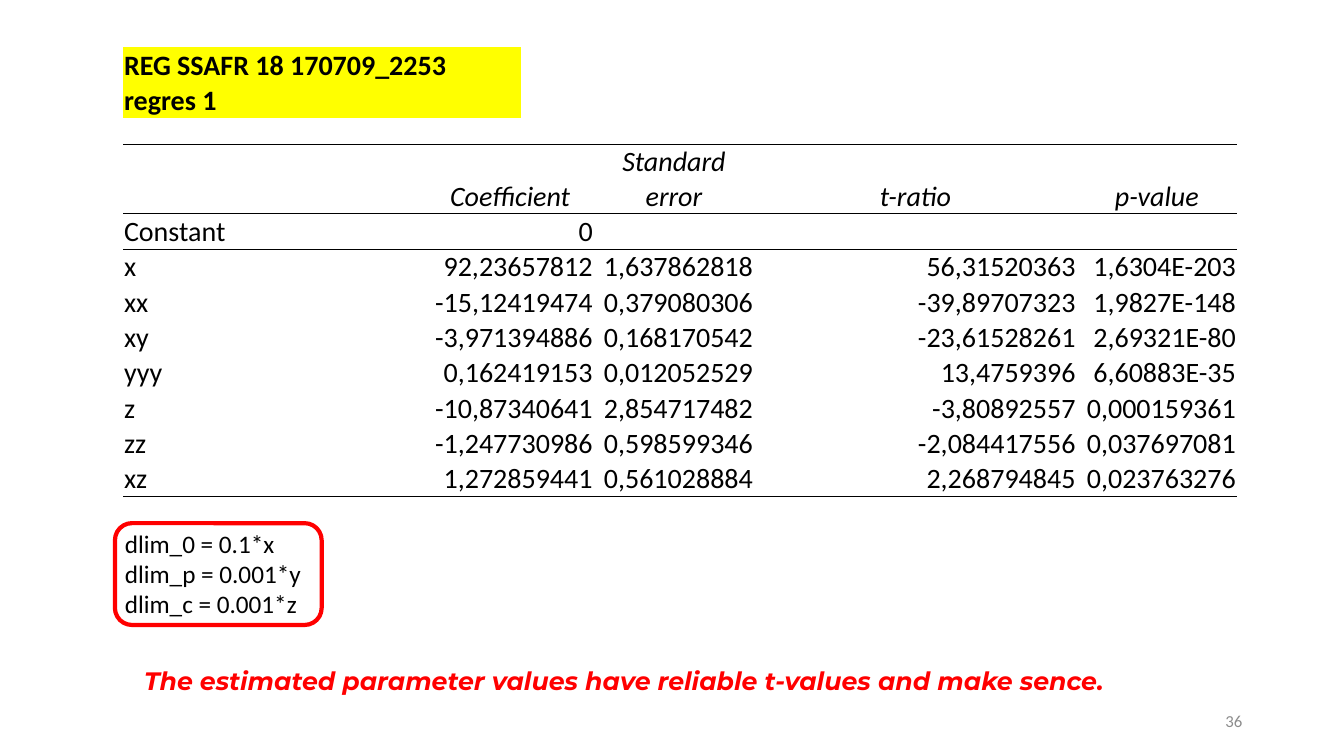
from lxml.etree import SubElement
from pptx import Presentation
from pptx.dml.color import RGBColor
from pptx.enum.shapes import MSO_SHAPE as Shape
from pptx.enum.text import MSO_ANCHOR as Anchor, PP_ALIGN as Align
from pptx.oxml.ns import qn
from pptx.util import Pt

PX = 9144  # 100 px to the inch
ROW = 34
NO_GRID_STYLE = "{2D5ABB26-0587-4C30-8999-92F81FD0307C}"


def format_text(frame, size, color="000000", font="Calibri", align=Align.LEFT, bold=False, italic=False):
    for para in frame.paragraphs:
        para.alignment = align
        for span in para.runs:
            span.font.name = font
            span.font.size = Pt(size)
            span.font.bold = bold
            span.font.italic = italic
            span.font.color.rgb = RGBColor.from_string(color)


def add_plain_table(left, top, widths, heights):
    frame = slide.shapes.add_table(len(heights), len(widths), left * PX, top * PX,
                                   sum(widths) * PX, sum(heights) * PX)
    table = frame.table
    table.first_row = table.horz_banding = False
    table._tbl.tblPr.find(qn("a:tableStyleId")).text = NO_GRID_STYLE
    for column, width in zip(table.columns, widths):
        column.width = width * PX
    for row, height in zip(table.rows, heights):
        row.height = height * PX
    for cell in table.iter_cells():
        cell.margin_left = cell.margin_right = cell.margin_top = PX
        cell.margin_bottom = 0
        cell.vertical_anchor = Anchor.BOTTOM
    return table


deck = Presentation()
deck.slide_width, deck.slide_height = 1333 * PX, 750 * PX
slide = deck.slides.add_slide(deck.slide_layouts[6])

# Highlighted heading
heading = add_plain_table(122, 47, [395], [ROW] * 2)
for cell, text in zip(heading.iter_cells(), ["REG SSAFR 18 170709_2253", "regres 1"]):
    cell.text = text
    format_text(cell.text_frame, 20, bold=True)
    cell.fill.solid()
    cell.fill.fore_color.rgb = RGBColor.from_string("FFFF00")

# Regression results
results = [
    ["", "Coefficient", "Standard error", "t-ratio", "p-value"],
    ["Constant", "0", "", "", ""],
    ["x", "92,23657812", "1,637862818", "56,31520363", "1,6304E-203"],
    ["xx", "-15,12419474", "0,379080306", "-39,89707323", "1,9827E-148"],
    ["xy", "-3,971394886", "0,168170542", "-23,61528261", "2,69321E-80"],
    ["yyy", "0,162419153", "0,012052529", "13,4759396", "6,60883E-35"],
    ["z", "-10,87340641", "2,854717482", "-3,80892557", "0,000159361"],
    ["zz", "-1,247730986", "0,598599346", "-2,084417556", "0,037697081"],
    ["xz", "1,272859441", "0,561028884", "2,268794845", "0,023763276"],
]
last = len(results) - 1
rules = {0: [("a:lnT", 1), ("a:lnB", 0.5)], 1: [("a:lnT", 0.5)], last: [("a:lnB", 1)]}
regression = add_plain_table(122, 143, [301, 166, 159, 320, 159], [2 * ROW] + [ROW] * last)
for r, values in enumerate(results):
    for c, value in enumerate(values):
        cell = regression.cell(r, c)
        if value:
            cell.text = value
        align = Align.CENTER if r == 0 else Align.RIGHT if c else Align.LEFT
        format_text(cell.text_frame, 20, align=align, italic=r == 0)
        # Borders come before the fill in the cell properties
        properties = cell._tc.get_or_add_tcPr()
        for side, width in rules.get(r, []):
            line = SubElement(properties, qn(side), w=str(Pt(width)))
            SubElement(SubElement(line, qn("a:solidFill")), qn("a:srgbClr"), val="000000")
        cell.fill.background()

# Text boxes: limits, conclusion and page number
limits = slide.shapes.add_textbox(114 * PX, 519 * PX, 667 * PX, 101 * PX)
limits.text_frame.word_wrap = True
limits.text_frame.text = "dlim_0 = 0.1*x\ndlim_p = 0.001*y\ndlim_c = 0.001*z"
format_text(limits.text_frame, 18)

conclusion = slide.shapes.add_textbox(133 * PX, 655 * PX, 1015 * PX, 40 * PX)
conclusion.text_frame.word_wrap = False
conclusion.text_frame.text = "The estimated parameter values have reliable t-values and make sence."
format_text(conclusion.text_frame, 18, "FF0000", "Montserrat", bold=True, italic=True)

page_number = slide.shapes.add_textbox(942 * PX, 695 * PX, 300 * PX, 40 * PX)
page_number.text_frame.word_wrap = True
page_number.text_frame.vertical_anchor = Anchor.MIDDLE
page_number.text_frame.text = "36"
format_text(page_number.text_frame, 12, "8C8C8C", align=Align.RIGHT)

# Red frame around the limits
outline = slide.shapes.add_shape(Shape.ROUNDED_RECTANGLE, 114 * PX, 519 * PX, 205 * PX, 101 * PX)
outline.shadow.inherit = False
outline.fill.background()
outline.line.color.rgb = RGBColor.from_string("FF0000")
outline.line.width = Pt(3)

deck.save("out.pptx")
